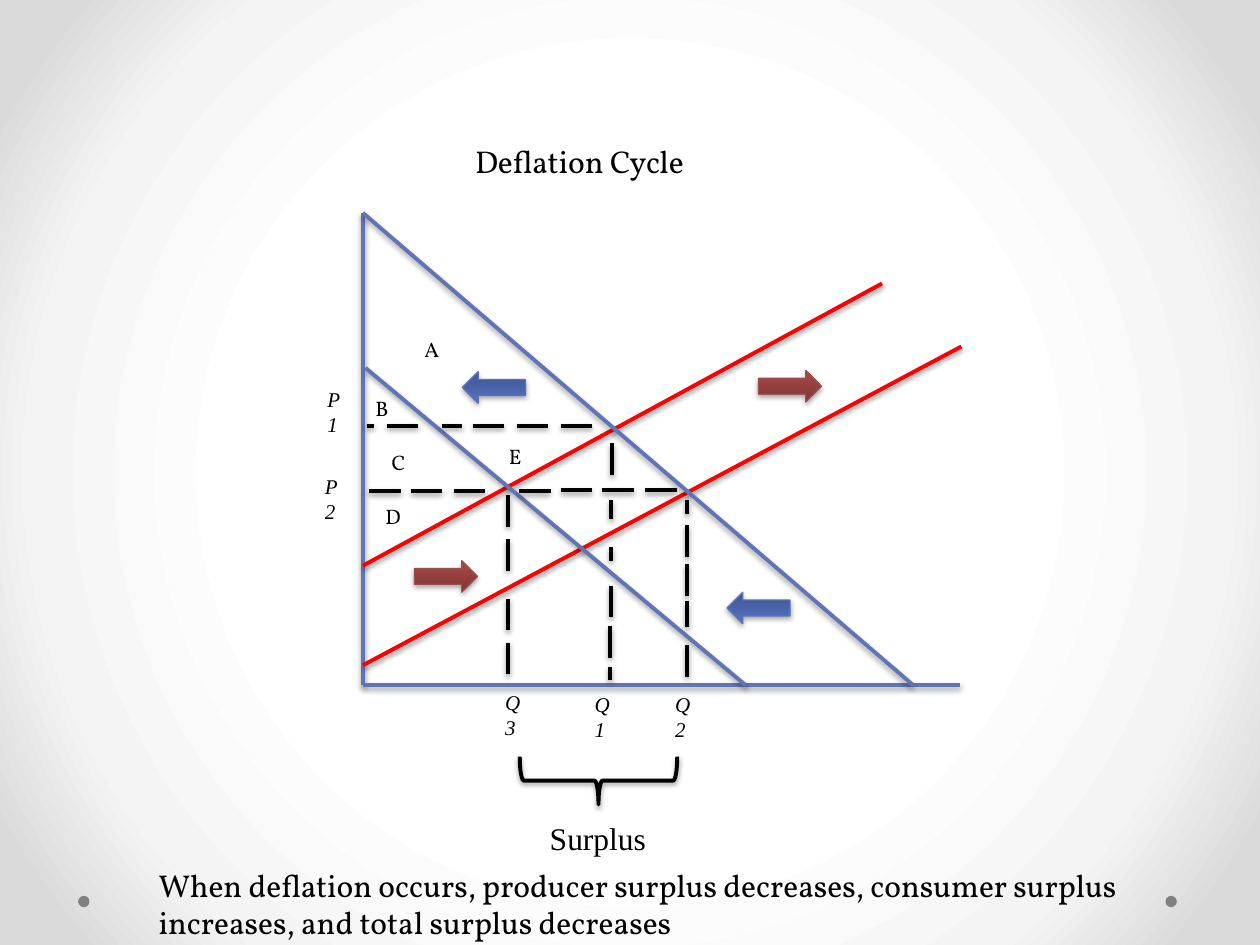
from lxml.etree import SubElement
from pptx import Presentation
from pptx.dml.color import RGBColor
from pptx.enum.shapes import MSO_CONNECTOR, MSO_SHAPE
from pptx.enum.text import MSO_ANCHOR, MSO_AUTO_SIZE, PP_ALIGN
from pptx.oxml.ns import qn
from pptx.util import Inches, Pt

THEME = {
    "ink": "000000", "blue": "6076B4", "red": "FF0000", "dot": "808080",
    "serif": "Times New Roman", "body": "Vollkorn",
    "small": 12, "large": 18, "stroke": 2.25, "thin": 0.75,
    "backdrop": [(50, "FFFFFF"), (76, "F4F4F4"), (92, "DADADA")],
}
ARROW_STYLES = {
    "demand": {"stops": [(0, "3E5490"), (80, "516DBB"), (100, "4F6CBE")],
               "line": "5C72B2", "rotation": 180},
    "supply": {"stops": [(0, "7D3535"), (80, "A24545"), (100, "A44343")],
               "line": "9A4E4E", "rotation": 0},
}

TITLE = ("Deflation Cycle", 3.67, 1.08, 1.93, 0.4)
CAPTION = ("When deflation occurs, producer surplus decreases, consumer surplus "
           "increases, and total surplus decreases", 1.16, 6.82, 8.18, 0.71)
SURPLUS = ("Surplus", 4.12, 6.45, 1.25, 0.38)
AREAS = [("A", 3.27, 2.62, 0.33, 0.3), ("B", 2.88, 3.09, 0.39, 0.3),
         ("C", 3.01, 3.52, 0.32, 0.3), ("D", 2.96, 3.95, 0.35, 0.3),
         ("E", 3.94, 3.47, 0.32, 0.3)]
AXIS_LABELS = [("P1", 2.5, 3.02, 0.38, 0.38), ("P2", 2.48, 3.71, 0.38, 0.38),
               ("Q1", 4.62, 5.44, 0.38, 0.38), ("Q2", 5.26, 5.44, 0.38, 0.51),
               ("Q3", 3.91, 5.42, 0.38, 0.51)]

# Lines: colour, start x, start y, end x, end y
AXES_AND_CURVES = [
    ("blue", 2.88, 1.69, 2.88, 5.44), ("blue", 7.62, 5.44, 2.88, 5.44),
    ("red", 2.88, 4.49, 7, 2.25), ("red", 2.88, 5.28, 7.63, 2.75),
    ("blue", 2.88, 1.69, 7.25, 5.44), ("blue", 2.9, 2.92, 5.92, 5.44),
]
# Dashes at one price (y) or quantity (x): level, then (start, length)
DASH = 0.25
PRICE_DASHES = [
    (3.38, [(2.91, 0.06), (3.07, DASH), (3.51, 0.16), (3.75, DASH),
            (4.1, DASH), (4.45, DASH)]),
    (3.9, [(2.93, DASH), (3.26, DASH), (3.6, DASH), (4.12, DASH)]),
    (3.89, [(4.45, DASH), (4.78, DASH), (5.12, DASH)]),
]
QUANTITY_DASHES = [
    (4.03, [(3.93, DASH), (4.28, DASH), (4.75, DASH), (5.1, DASH)]),
    (4.86, [(3.52, DASH)]),
    (4.85, [(3.97, 0.15), (4.34, 0.11), (4.65, DASH)]),
    (4.84, [(4.97, DASH), (5.29, 0.11)]),
    (5.45, [(3.97, 0.11), (4.17, DASH), (4.48, DASH), (4.77, 0.21), (5.12, DASH)]),
]
SHIFT_ARROWS = [("demand", 5.77, 4.7), ("demand", 3.67, 2.95),
                ("supply", 6.02, 2.94), ("supply", 3.29, 4.45)]
ARROW_SIZE = (0.5, 0.25)
BRACE = (4.56, 5.57, 0.38, 1.25)
DOTS = [(0.62, 7.11, 0.09, 0.09), (9.25, 7.11, 0.09, 0.09)]


def color(name):
    return RGBColor.from_string(THEME.get(name, name))


def set_stops(gradient, stops):
    stop_list = gradient.find(qn("a:gsLst"))
    for old in list(stop_list):
        stop_list.remove(old)
    for percent, value in stops:
        stop = SubElement(stop_list, qn("a:gs"), pos=str(percent * 1000))
        SubElement(stop, qn("a:srgbClr"), val=value)


def add_shadow(shape, percent=38):
    effects = SubElement(shape._element.spPr, qn("a:effectLst"))
    shadow = SubElement(effects, qn("a:outerShdw"), blurRad=str(Pt(3.1)),
                        dist=str(Pt(1.6)), dir="5400000", rotWithShape="0")
    black = SubElement(shadow, qn("a:srgbClr"), val=THEME["ink"])
    SubElement(black, qn("a:alpha"), val=str(percent * 1000))


def set_line(shape, name, width):
    shape.line.color.rgb = color(name)
    shape.line.width = Pt(width)


def paint_background(slide):
    """Radial gradient spreading from the middle of the slide."""
    slide.background.fill.gradient()
    gradient = slide._element.xpath(".//p:bg//a:gradFill")[0]
    set_stops(gradient, THEME["backdrop"])
    gradient.remove(gradient.find(qn("a:lin")))
    circle = SubElement(gradient, qn("a:path"))
    circle.set("path", "circle")
    SubElement(circle, qn("a:fillToRect"),
               {side: "50000" for side in "ltrb"})


def add_segment(slide, name, *ends):
    segment = slide.shapes.add_connector(MSO_CONNECTOR.STRAIGHT, *map(Inches, ends))
    set_line(segment, name, THEME["stroke"])
    add_shadow(segment)


def add_preset(slide, preset, place):
    shape = slide.shapes.add_shape(preset, *map(Inches, place))
    return shape


def add_arrow(slide, shift, left, top):
    style = ARROW_STYLES[shift]
    arrow = add_preset(slide, MSO_SHAPE.RIGHT_ARROW, (left, top, *ARROW_SIZE))
    arrow.rotation = style["rotation"]
    arrow.fill.gradient()
    arrow.fill.gradient_angle = 90
    set_stops(arrow._element.spPr.find(qn("a:gradFill")), style["stops"])
    set_line(arrow, style["line"], THEME["thin"])
    add_shadow(arrow, 35)


def write(box, text, size, font, italic=False, align=PP_ALIGN.LEFT, wrap=True):
    frame = box.text_frame
    frame_format = {"word_wrap": wrap, "auto_size": MSO_AUTO_SIZE.NONE,
                    "vertical_anchor": MSO_ANCHOR.TOP}
    for key, value in frame_format.items():
        setattr(frame, key, value)
    para = frame.paragraphs[0]
    para.alignment = align
    span = para.add_run()
    span.text = text
    span_format = {"size": Pt(THEME[size]), "name": THEME[font], "italic": italic}
    for key, value in span_format.items():
        setattr(span.font, key, value)
    span.font.color.rgb = color("ink")


def add_text(slide, label, *style, **options):
    text, *place = label
    box = slide.shapes.add_textbox(*map(Inches, place))
    write(box, text, *style, **options)


def add_title(slide):
    text, *place = TITLE
    title = slide.shapes.title
    for side, value in zip(("left", "top", "width", "height"), place):
        setattr(title, side, Inches(value))
    write(title, text, "large", "body", wrap=False)


def main():
    deck = Presentation()
    deck.slide_width, deck.slide_height = Inches(10), Inches(7.5)
    slide = deck.slides.add_slide(deck.slide_layouts[5])
    paint_background(slide)
    add_title(slide)

    for place in DOTS:
        dot = add_preset(slide, MSO_SHAPE.OVAL, place)
        dot.shadow.inherit = False
        dot.fill.solid()
        dot.fill.fore_color.rgb = color("dot")
        dot.line.fill.background()

    for segment in AXES_AND_CURVES:
        add_segment(slide, *segment)
    for y, dashes in PRICE_DASHES:
        for start, length in dashes:
            add_segment(slide, "ink", start, y, start + length, y)
    for x, dashes in QUANTITY_DASHES:
        for start, length in dashes:
            add_segment(slide, "ink", x, start, x, start + length)
    for arrow in SHIFT_ARROWS:
        add_arrow(slide, *arrow)

    brace = add_preset(slide, MSO_SHAPE.RIGHT_BRACE, BRACE)
    brace.rotation = 90
    brace.fill.background()
    set_line(brace, "ink", THEME["stroke"])
    add_shadow(brace)

    for label in AREAS:
        add_text(slide, label, "small", "body", wrap=False)
    for label in AXIS_LABELS:
        add_text(slide, label, "small", "serif", italic=True)
    add_text(slide, SURPLUS, "large", "serif", align=PP_ALIGN.CENTER)
    add_text(slide, CAPTION, "large", "body")
    deck.save("out.pptx")


if __name__ == "__main__":
    main()
